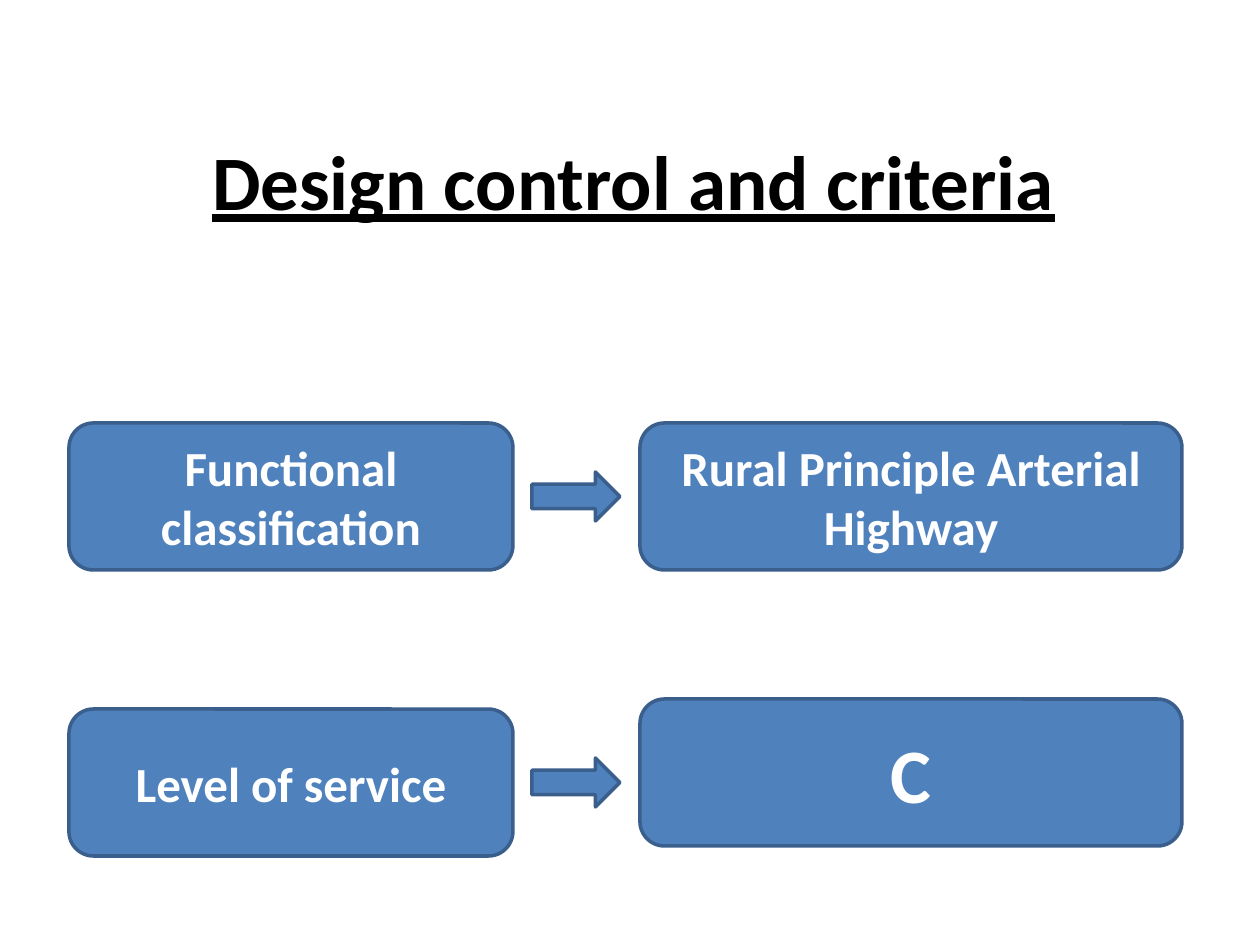
from pptx import Presentation
from pptx.dml.color import RGBColor
from pptx.enum.shapes import MSO_SHAPE
from pptx.enum.text import MSO_ANCHOR, PP_ALIGN
from pptx.util import Pt

ROUNDED = MSO_SHAPE.ROUNDED_RECTANGLE
ARROW = MSO_SHAPE.RIGHT_ARROW
MIDDLE = MSO_ANCHOR.MIDDLE
CENTER = PP_ALIGN.CENTER
EMU_PER_PX = 914400 / 126


def px(length):
    return round(length * EMU_PER_PX)


def color(value):
    return RGBColor.from_string(value)


class CriteriaSlide:
    font_name = "Calibri"
    fill = "4F81BD"
    outline = "3A5F8C"
    ink = "000000"
    box_ink = "FFFFFF"

    def __init__(self, deck):
        self.slide = deck.slides.add_slide(deck.slide_layouts[0])
        subtitle = self.slide.placeholders[1].element
        subtitle.getparent().remove(subtitle)

    def set_text(self, frame, text, size, ink, underline=False):
        frame.word_wrap = True
        frame.vertical_anchor = MIDDLE
        frame.text = text
        paragraph = frame.paragraphs[0]
        paragraph.alignment = CENTER
        font = paragraph.font
        font.name = self.font_name
        font.size = Pt(size)
        font.bold = True
        font.underline = underline
        font.color.rgb = color(ink)

    def title(self, text, left, top, width, height):
        heading = self.slide.shapes.title
        heading.left, heading.top = px(left), px(top)
        heading.width, heading.height = px(width), px(height)
        self.set_text(heading.text_frame, text, 44, self.ink, underline=True)

    def shape(self, preset, left, top, width, height):
        shape = self.slide.shapes.add_shape(
            preset, px(left), px(top), px(width), px(height))
        shape.shadow.inherit = False
        shape.fill.solid()
        shape.fill.fore_color.rgb = color(self.fill)
        shape.line.color.rgb = color(self.outline)
        shape.line.width = Pt(2)
        return shape

    def box(self, text, left, top, width, size):
        box = self.shape(ROUNDED, left, top, width, 147)
        self.set_text(box.text_frame, text, size, self.box_ink)

    def arrow(self, left, top):
        self.shape(ARROW, left, top, 88, 49)


def main():
    deck = Presentation()
    deck.slide_width, deck.slide_height = px(1260), px(945)
    page = CriteriaSlide(deck)
    page.title("Design control and criteria", 98, 78, 1071, 203)
    criteria = [
        ("Functional classification", 423, "Rural Principle Arterial Highway", 423, 28),
        ("Level of service", 709, "C", 699, 44),
    ]
    for criterion, top, value, value_top, value_size in criteria:
        page.box(criterion, 69, top, 444, 28)
        page.arrow(532, top + 49)
        page.box(value, 640, value_top, 542, value_size)
    deck.save("out.pptx")


if __name__ == "__main__":
    main()
